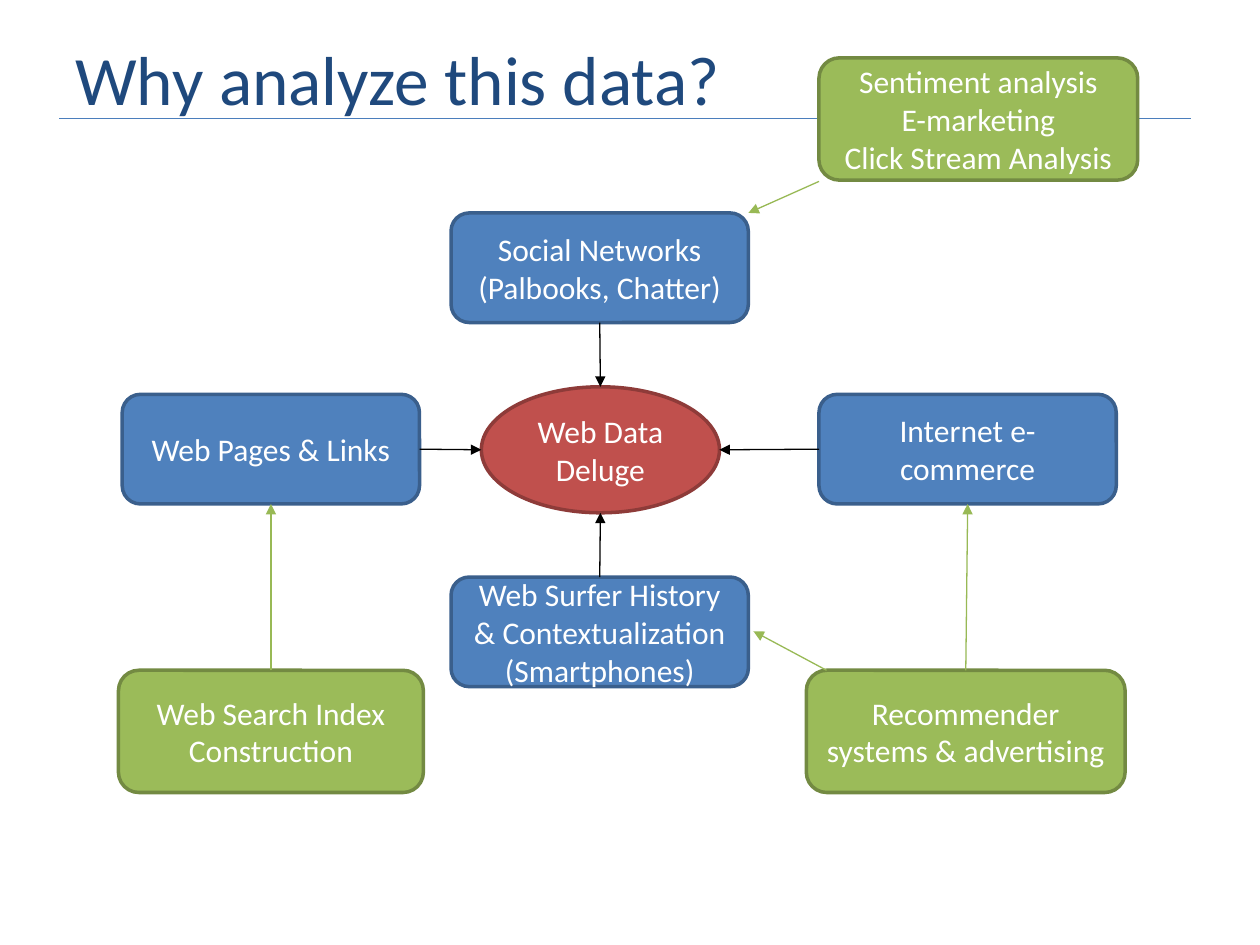
from lxml import etree
from pptx import Presentation
from pptx.dml.color import RGBColor
from pptx.enum import shapes, text
from pptx.oxml import ns
from pptx.util import Inches, Pt

COLORS = {
    "title": "1F497D",
    "rule": "4B7EBC",
    "text": "FFFFFF",
    "black": "000000",
    "source": "4F81BD",
    "source_line": "3A5F8C",
    "hub": "C0504D",
    "hub_line": "8E3B39",
    "use": "9BBB59",
    "use_line": "738A42",
    "use_arrow": "98B955",
}
FONT = "Calibri"
TOP, LEFT, BOTTOM, RIGHT = range(4)


def color(name):
    return RGBColor.from_string(COLORS[name])


def add_run(paragraph, wording, size, color_name):
    run = paragraph.add_run()
    run.text = wording
    run.font.name = FONT
    run.font.size = Pt(size)
    run.font.color.rgb = color(color_name)


def add_node(slide, kind, style, box, lines):
    shape = slide.shapes.add_shape(kind, *map(Inches, box))
    shape.shadow.inherit = False
    shape.fill.solid()
    shape.fill.fore_color.rgb = color(style)
    shape.line.color.rgb = color(style + "_line")
    shape.line.width = Pt(2)
    frame = shape.text_frame
    frame.word_wrap = True
    frame.vertical_anchor = text.MSO_ANCHOR.MIDDLE
    for index, line in enumerate(lines):
        paragraph = frame.add_paragraph() if index else frame.paragraphs[0]
        paragraph.alignment = text.PP_ALIGN.CENTER
        add_run(paragraph, line, 18, "text")
    return shape


def add_line(slide, color_name, start, end, arrow=True):
    connector = slide.shapes.add_connector(
        shapes.MSO_CONNECTOR.STRAIGHT, *map(Inches, (*start, *end)))
    connector.line.color.rgb = color(color_name)
    connector.line.width = Pt(0.75)
    if arrow:
        outline = connector.line._get_or_add_ln()
        etree.SubElement(outline, ns.qn("a:tailEnd"), type="triangle")
    etree.SubElement(connector._element.spPr, ns.qn("a:effectLst"))
    return connector


def add_title(slide, box):
    left, top, width, height = box
    add_line(slide, "rule", (0.47, top + height), (9.45, top + height), arrow=False)
    title = slide.shapes.add_textbox(*map(Inches, box))
    frame = title.text_frame
    frame.word_wrap = True
    frame.vertical_anchor = text.MSO_ANCHOR.MIDDLE
    add_run(frame.paragraphs[0], "Why analyze this data?", 39.6, "title")


def add_sources(slide, hub_box):
    left, top, width, height = hub_box
    center_x, center_y = left + width / 2, top + height / 2
    rounded = shapes.MSO_SHAPE.ROUNDED_RECTANGLE
    sources = {
        "social": (3.58, 1.69, ["Social Networks", "(Palbooks, Chatter)"],
                   BOTTOM, (center_x, top)),
        "pages": (0.97, 3.13, ["Web Pages & Links"], RIGHT, (left, center_y)),
        "commerce": (6.5, 3.13, ["Internet e-commerce"],
                     LEFT, (left + width, center_y)),
        "history": (3.58, 4.58,
                    ["Web Surfer History & Contextualization", "(Smartphones)"],
                    TOP, (center_x, top + height)),
    }
    nodes = {
        name: add_node(slide, rounded, "source", (x, y, 2.36, 0.87), lines)
        for name, (x, y, lines, side, target) in sources.items()
    }
    add_node(slide, shapes.MSO_SHAPE.OVAL, "hub", hub_box, ["Web Data Deluge"])
    for name, (x, y, lines, side, target) in sources.items():
        add_line(slide, "black", target, target).begin_connect(nodes[name], side)
    return nodes


def add_uses(slide, sources):
    uses = [
        ((0.94, 5.32, 2.42, 0.97), ["Web Search Index Construction"], "pages"),
        ((6.4, 5.32, 2.53, 0.97), ["Recommender systems & advertising"], "commerce"),
        ((6.5, 0.46, 2.53, 0.97),
         ["Sentiment analysis", "E-marketing", "Click Stream Analysis"], None),
    ]
    for box, lines, target in uses:
        node = add_node(slide, shapes.MSO_SHAPE.ROUNDED_RECTANGLE, "use", box, lines)
        if target:
            arrow = add_line(slide, "use_arrow", box[:2], box[:2])
            arrow.begin_connect(node, TOP)
            arrow.end_connect(sources[target], BOTTOM)
    add_line(slide, "use_arrow", (6.5, 1.44), (5.94, 1.69))
    add_line(slide, "use_arrow", (6.56, 5.32), (5.98, 5.01))


def main():
    presentation = Presentation()
    presentation.slide_width = Inches(10)
    presentation.slide_height = Inches(7.5)
    slide = presentation.slides.add_slide(presentation.slide_layouts[6])
    add_title(slide, (0.5, 0.3, 9, 0.64))
    sources = add_sources(slide, (3.82, 3.07, 1.89, 1))
    add_uses(slide, sources)
    presentation.save("out.pptx")


if __name__ == "__main__":
    main()
